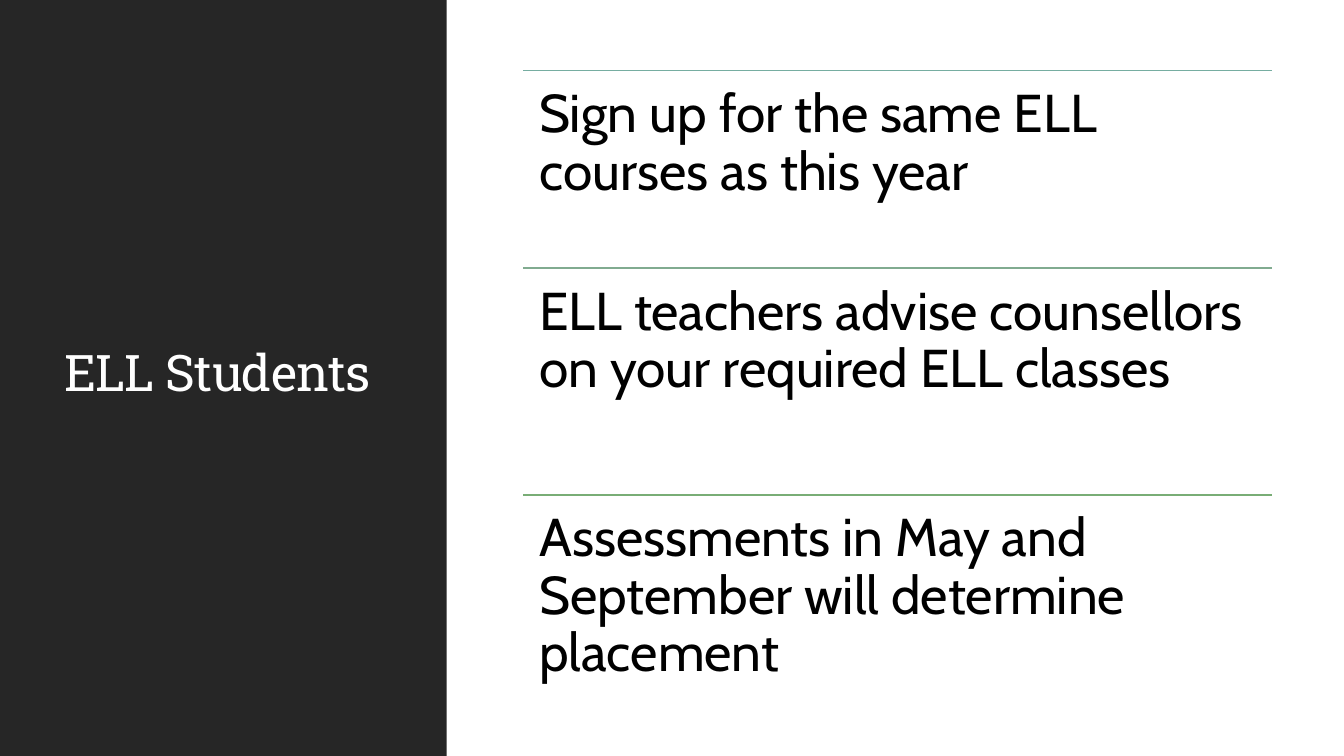
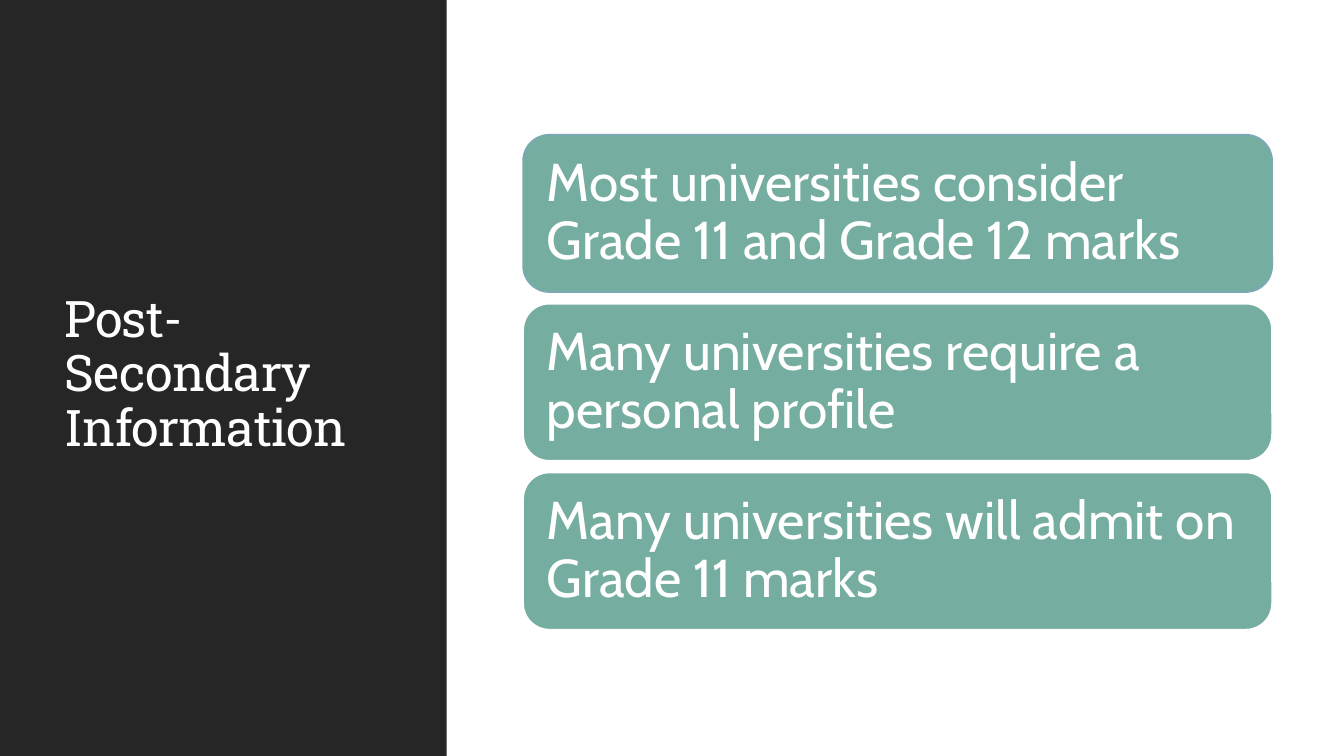
"""Builds two course-planning slides with a dark title panel on the left."""
from pptx import Presentation
from pptx.dml.color import RGBColor
from pptx.enum.shapes import MSO_CONNECTOR as LINK, MSO_SHAPE as SHAPE
from pptx.enum.text import MSO_ANCHOR as ANCHOR, PP_ALIGN as ALIGN
from pptx.util import Pt
from lxml import etree

DARK, WHITE, BLACK, TEAL = "262626", "FFFFFF", "000000", "76ADA1"
LEFT, WIDTH = 373.7, 535
DRAW = "{http://schemas.openxmlformats.org/drawingml/2006/main}"


def color(code):
    return RGBColor.from_string(code)


def write(shape, text, size, font, code, anchor, inset=None):
    frame = shape.text_frame
    frame.word_wrap = True
    frame.vertical_anchor = anchor
    if inset is not None:
        frame.margin_left = frame.margin_right = Pt(inset)
        frame.margin_top = frame.margin_bottom = Pt(inset)
    frame.text = text
    para = frame.paragraphs[0]
    para.alignment = ALIGN.LEFT
    para.line_spacing = 0.9
    run = para.runs[0]
    run.font.size = Pt(size)
    run.font.name = font
    run.font.color.rgb = color(code)
    return run


deck = Presentation()
deck.slide_width, deck.slide_height = Pt(960), Pt(540)

slides = []
for title in ("ELL Students", "Post-Secondary Information"):
    slide = deck.slides.add_slide(deck.slide_layouts[6])
    panel = slide.shapes.add_shape(SHAPE.RECTANGLE, 0, 0, Pt(319), Pt(540))
    panel.shadow.inherit = False
    panel.fill.solid()
    panel.fill.fore_color.rgb = color(DARK)
    panel.line.fill.background()
    box = slide.shapes.add_textbox(Pt(39), Pt(41), Pt(242.6), Pt(454.3))
    run = write(box, title, 36, "Roboto Slab", WHITE, ANCHOR.MIDDLE)
    run._r.get_or_add_rPr().set("spc", "-50")
    slides.append(slide)

ell, post = slides

rows = [
    ("Sign up for the same ELL courses as this year", TEAL, 141),
    ("ELL teachers advise counsellors on your required ELL classes", "81AB90", 162),
    ("Assessments in May and September will determine placement", "79AD76", 141),
]
top = 50.4
for text, code, height in rows:
    rule = ell.shapes.add_connector(
        LINK.STRAIGHT, Pt(LEFT), Pt(top), Pt(LEFT + WIDTH), Pt(top))
    rule.line.color.rgb = color(code)
    rule.line.width = Pt(1.25)
    etree.SubElement(rule._element.spPr, DRAW + "effectLst")
    box = ell.shapes.add_textbox(Pt(LEFT), Pt(top), Pt(WIDTH), Pt(height))
    write(box, text, 38, "Cabin", BLACK, ANCHOR.TOP, 11.5)
    top += height

cards = [
    ("Most universities consider Grade 11 and Grade 12 marks", "7BA9B5"),
    ("Many universities require a personal profile", WHITE),
    ("Many universities will admit on Grade 11 marks", WHITE),
]
for i, (text, edge) in enumerate(cards):
    card = post.shapes.add_shape(
        SHAPE.ROUNDED_RECTANGLE, Pt(LEFT), Pt(96.3 + i * 120.6), Pt(WIDTH), Pt(112.3))
    card.shadow.inherit = False
    card.fill.solid()
    card.fill.fore_color.rgb = color(TEAL)
    card.line.color.rgb = color(edge)
    card.line.width = Pt(1.25)
    write(card, text, 38, "Cabin", WHITE, ANCHOR.MIDDLE, 11.5)

deck.save("out.pptx")
